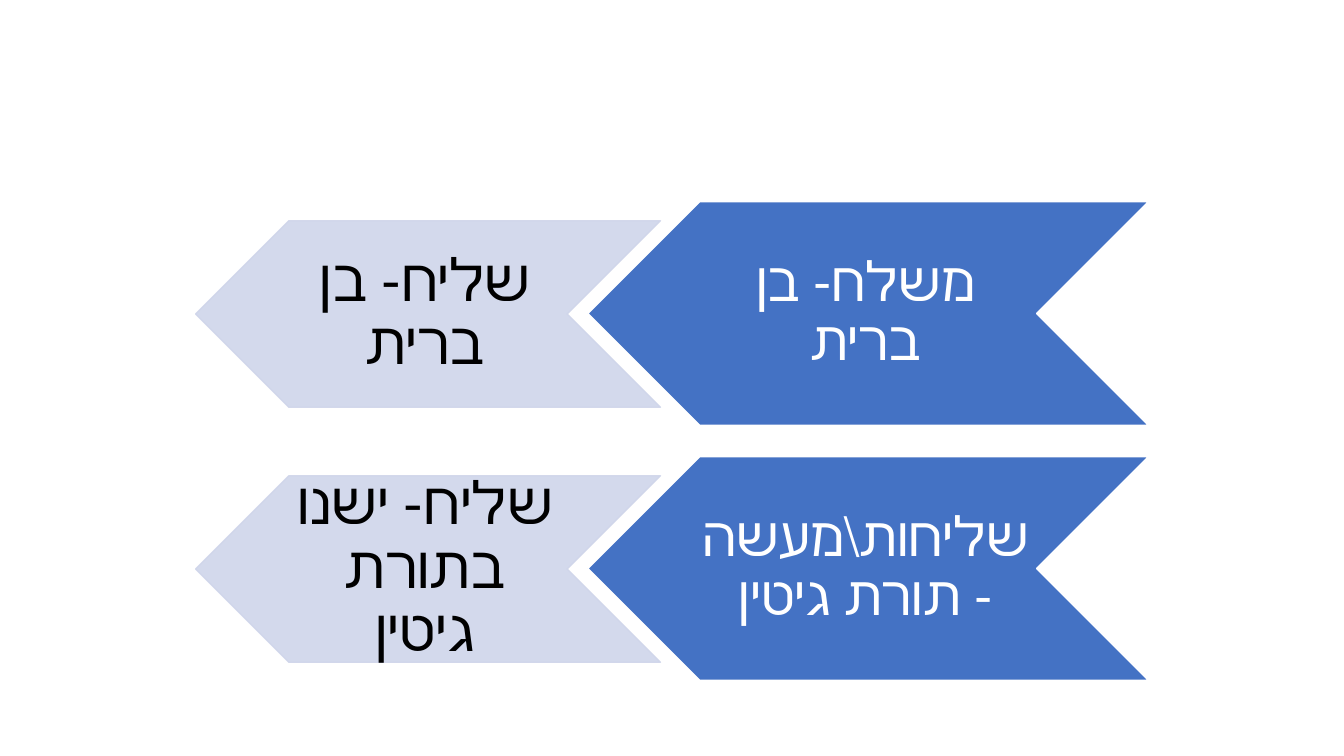
"""Build a slide with two rows of left-pointing chevrons in Hebrew."""
from lxml.etree import SubElement
from pptx import Presentation
from pptx.dml.color import RGBColor
from pptx.enum.shapes import MSO_SHAPE
from pptx.enum.text import MSO_ANCHOR, PP_ALIGN
from pptx.oxml.ns import qn
from pptx.util import Pt

PX = 9144
BLUE = RGBColor(0x44, 0x72, 0xC4)
PALE = RGBColor(0xCF, 0xD5, 0xEA)
WHITE = RGBColor(0xFF, 0xFF, 0xFF)
BLACK = RGBColor(0x00, 0x00, 0x00)
FONT = "Calibri"
FIRST_CENTER, ROW_STEP = 311, 253

ROWS = [
    ("משלח- בן\vברית", "שליח- בן\vברית"),
    ("שליחות\\מעשה\v- תורת גיטין", "שליח- ישנו\vבתורת\vגיטין"),
]
STYLES = [
    (583, 556, 222, BLUE, WHITE, WHITE, 39, 5, None),
    (194, 461, 185, PALE, PALE, BLACK, 42, 6, "90000"),
]


def add_chevron(slide, left, top, width, height, fill, line, alpha):
    shape = slide.shapes.add_shape(
        MSO_SHAPE.CHEVRON, left * PX, top * PX, width * PX, height * PX)
    shape.rotation = 180
    shape.shadow.inherit = False
    shape.fill.solid()
    shape.fill.fore_color.rgb = fill
    shape.line.color.rgb = line
    shape.line.width = Pt(1)
    if alpha:
        for color in list(shape._element.spPr.iter(qn("a:srgbClr"))):
            SubElement(color, qn("a:alpha"), val=alpha)


def add_label(slide, left, top, width, height, text, size, color, inset):
    box = slide.shapes.add_textbox(left * PX, top * PX, width * PX, height * PX)
    frame = box.text_frame
    frame.word_wrap = False
    frame.vertical_anchor = MSO_ANCHOR.MIDDLE
    frame.margin_left = 0
    frame.margin_right = inset * PX
    frame.margin_top = frame.margin_bottom = 3 * PX
    paragraph = frame.paragraphs[0]
    paragraph.text = text
    paragraph.alignment = PP_ALIGN.CENTER
    paragraph.line_spacing = 0.9
    paragraph.font.size = Pt(size)
    paragraph.font.name = FONT
    paragraph.font.color.rgb = color
    paragraph._p.pPr.set("rtl", "1")


presentation = Presentation()
presentation.slide_width = 1333 * PX
presentation.slide_height = 750 * PX
slide = presentation.slides.add_slide(presentation.slide_layouts[6])

for row, texts in enumerate(ROWS):
    center = FIRST_CENTER + row * ROW_STEP
    for text, style in zip(texts, STYLES):
        left, width, height, fill, line, color, size, inset, alpha = style
        top = center - height // 2
        notch = height // 2
        add_chevron(slide, left, top, width, height, fill, line, alpha)
        add_label(slide, left + notch, top, width - 2 * notch, height,
                  text, size, color, inset)

presentation.save("out.pptx")
